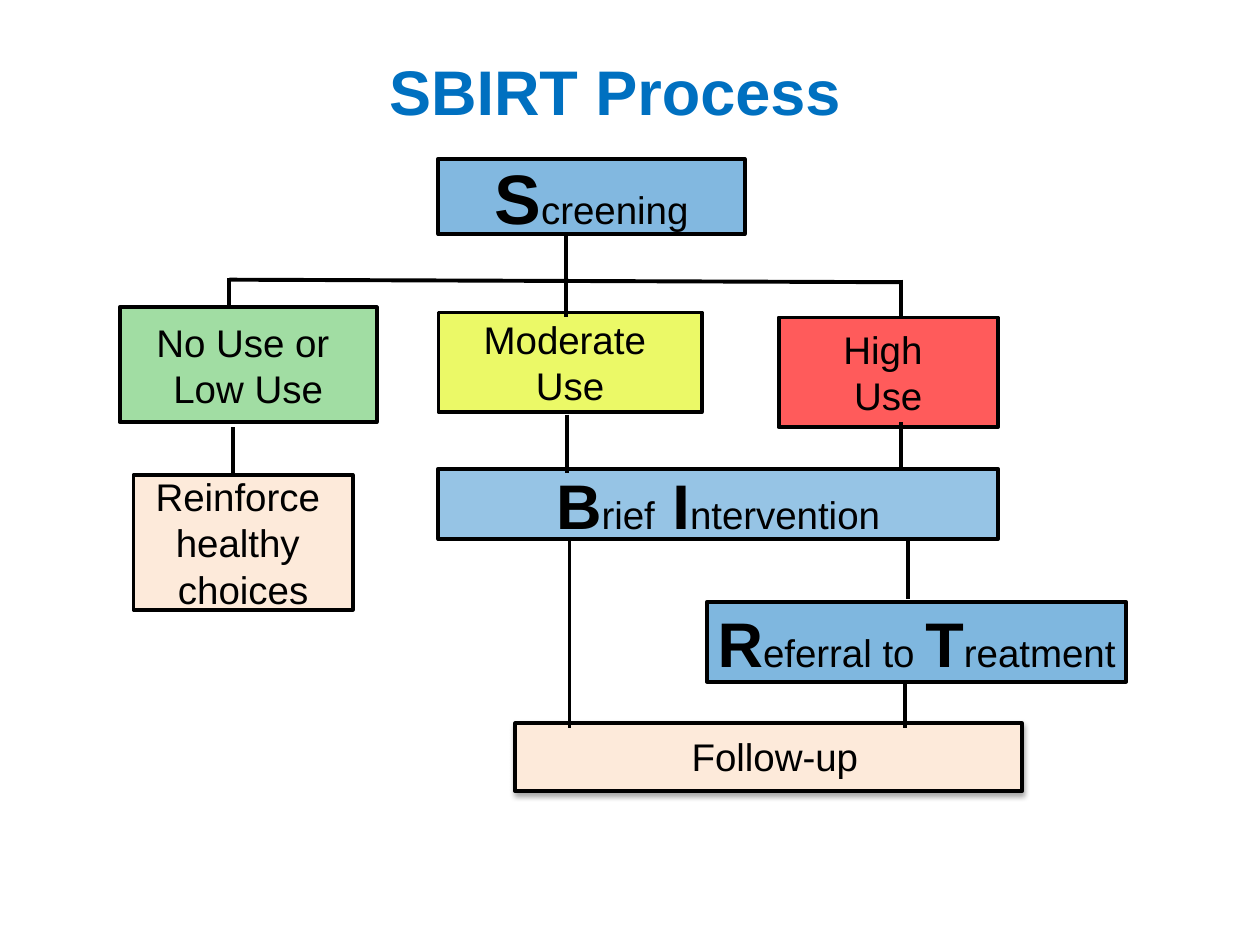
from dataclasses import dataclass
from typing import Optional

from lxml import etree
from pptx import Presentation
from pptx.dml.color import RGBColor
from pptx.enum import shapes, text
from pptx.oxml import ns
from pptx.util import Inches, Pt

BLACK = RGBColor(0x00, 0x00, 0x00)
BLUE = RGBColor(0x00, 0x70, 0xC0)
GREEN = RGBColor(0x44, 0xBD, 0x49)
YELLOW = RGBColor(0xEB, 0xF9, 0x67)
RED = RGBColor(0xFF, 0x5B, 0x5B)
PEACH = RGBColor(0xFD, 0xEA, 0xDA)

FONT = "Arial"
BODY, INITIAL, BIG_INITIAL = 22, 36, 40  # point sizes
LINE_WIDTH = Pt(2.25)


@dataclass
class Run:
    text: str
    size: int = BODY
    bold: bool = False
    color: RGBColor = BLACK


@dataclass
class Box:
    left: float
    top: float
    width: float
    height: float
    fill: RGBColor
    paragraphs: list[list[Run]]
    alpha: Optional[int] = None  # opacity in percent


@dataclass
class Line:
    x1: float
    y1: float
    x2: float
    y2: float


def plain(*lines: str) -> list[list[Run]]:
    return [[Run(line)] for line in lines]


def initials(*parts: tuple[str, str], size: int = INITIAL) -> list[list[Run]]:
    """One paragraph in which each word starts with a large bold letter."""
    return [[run for letter, rest in parts
             for run in (Run(letter, size, True), Run(rest))]]


# Boxes of the flow chart
BOXES = [
    Box(3.48, 1.26, 2.43, 0.6, BLUE,
        initials(("S", "creening"), size=BIG_INITIAL), 49),
    Box(0.95, 2.44, 2.04, 0.91, GREEN, plain("No Use or ", "Low Use"), 50),
    Box(3.48, 2.48, 2.09, 0.79, YELLOW, plain("Moderate ", "Use")),
    Box(6.18, 2.52, 1.74, 0.87, RED, plain("High ", "Use")),
    Box(3.48, 3.72, 4.44, 0.56, BLUE,
        initials(("B", "rief"), (" I", "ntervention")), 41),
    Box(5.61, 4.78, 3.33, 0.63, BLUE,
        initials(("R", "eferral to "), ("T", "reatment")), 50),
    Box(1.06, 3.77, 1.74, 1.07, PEACH,
        plain("Reinforce ", "healthy ", "choices")),
]
FOLLOW_UP = Box(4.09, 5.74, 4.02, 0.54, PEACH, [])

LINES = [
    # Screening to the three levels of use
    Line(1.82, 2.22, 7.15, 2.24),
    Line(4.49, 1.85, 4.49, 2.52),
    Line(1.82, 2.21, 1.82, 2.44),
    Line(7.15, 2.22, 7.15, 2.53),
    # Levels of use to their responses
    Line(1.85, 3.39, 1.85, 3.76),
    Line(4.5, 3.29, 4.5, 3.75),
    Line(7.15, 3.35, 7.15, 3.72),
    # Intervention to referral and follow-up
    Line(4.52, 4.29, 4.52, 5.78),
    Line(7.21, 4.29, 7.21, 4.75),
    Line(7.18, 5.41, 7.18, 5.78),
]


def write_text(frame, paragraphs: list[list[Run]], alignment,
               anchor=text.MSO_ANCHOR.MIDDLE, wrap: bool = False) -> None:
    frame.word_wrap = wrap
    frame.vertical_anchor = anchor
    for index, runs in enumerate(paragraphs):
        paragraph = frame.paragraphs[0] if index == 0 else frame.add_paragraph()
        paragraph.alignment = alignment
        for item in runs:
            run = paragraph.add_run()
            run.text = item.text
            formats = {"name": FONT, "size": Pt(item.size), "bold": item.bold}
            for name, value in formats.items():
                setattr(run.font, name, value)
            run.font.color.rgb = item.color


def add_label(slide, left: float, top: float, width: float, height: float,
              run: Run, alignment, anchor) -> None:
    label = slide.shapes.add_textbox(
        Inches(left), Inches(top), Inches(width), Inches(height))
    write_text(label.text_frame, [[run]], alignment, anchor, wrap=True)


def add_box(slide, box: Box):
    shape = slide.shapes.add_shape(
        shapes.MSO_SHAPE.RECTANGLE, Inches(box.left), Inches(box.top),
        Inches(box.width), Inches(box.height))
    shape.shadow.inherit = False
    shape.fill.solid()
    shape.fill.fore_color.rgb = box.fill
    shape.line.color.rgb = BLACK
    shape.line.width = LINE_WIDTH
    if box.alpha is not None:
        color = shape._element.spPr.find(ns.qn("a:solidFill"))[0]
        etree.SubElement(color, ns.qn("a:alpha"), val=str(box.alpha * 1000))
    write_text(shape.text_frame, box.paragraphs, text.PP_ALIGN.CENTER)
    return shape


def add_shadow(shape) -> None:
    effects = shape._element.spPr.find(ns.qn("a:effectLst"))
    shadow = etree.SubElement(
        effects, ns.qn("a:outerShdw"), blurRad=str(Pt(3.1)),
        dist=str(Pt(1.8)), dir=str(90 * 60000), rotWithShape="0")
    color = etree.SubElement(shadow, ns.qn("a:srgbClr"), val=str(BLACK))
    etree.SubElement(color, ns.qn("a:alpha"), val="35000")


def add_line(slide, line: Line) -> None:
    connector = slide.shapes.add_connector(
        shapes.MSO_CONNECTOR.STRAIGHT, Inches(line.x1), Inches(line.y1),
        Inches(line.x2), Inches(line.y2))
    connector.line.color.rgb = BLACK
    connector.line.width = LINE_WIDTH
    etree.SubElement(connector._element.spPr, ns.qn("a:effectLst"))


def main() -> None:
    presentation = Presentation()
    presentation.slide_width = Inches(10)
    presentation.slide_height = Inches(7.5)
    slide = presentation.slides.add_slide(presentation.slide_layouts[6])

    # Title
    add_label(slide, 2.99, 0.34, 4.43, 0.76,
              Run("SBIRT Process", INITIAL, True, BLUE),
              text.PP_ALIGN.LEFT, text.MSO_ANCHOR.MIDDLE)

    # Flow chart
    for box in BOXES:
        add_box(slide, box)
    add_shadow(add_box(slide, FOLLOW_UP))
    add_label(slide, 4.7, 5.77, 2.9, 0.47, Run("Follow-up"),
              text.PP_ALIGN.CENTER, text.MSO_ANCHOR.TOP)
    for line in LINES:
        add_line(slide, line)

    presentation.save("out.pptx")


if __name__ == "__main__":
    main()
